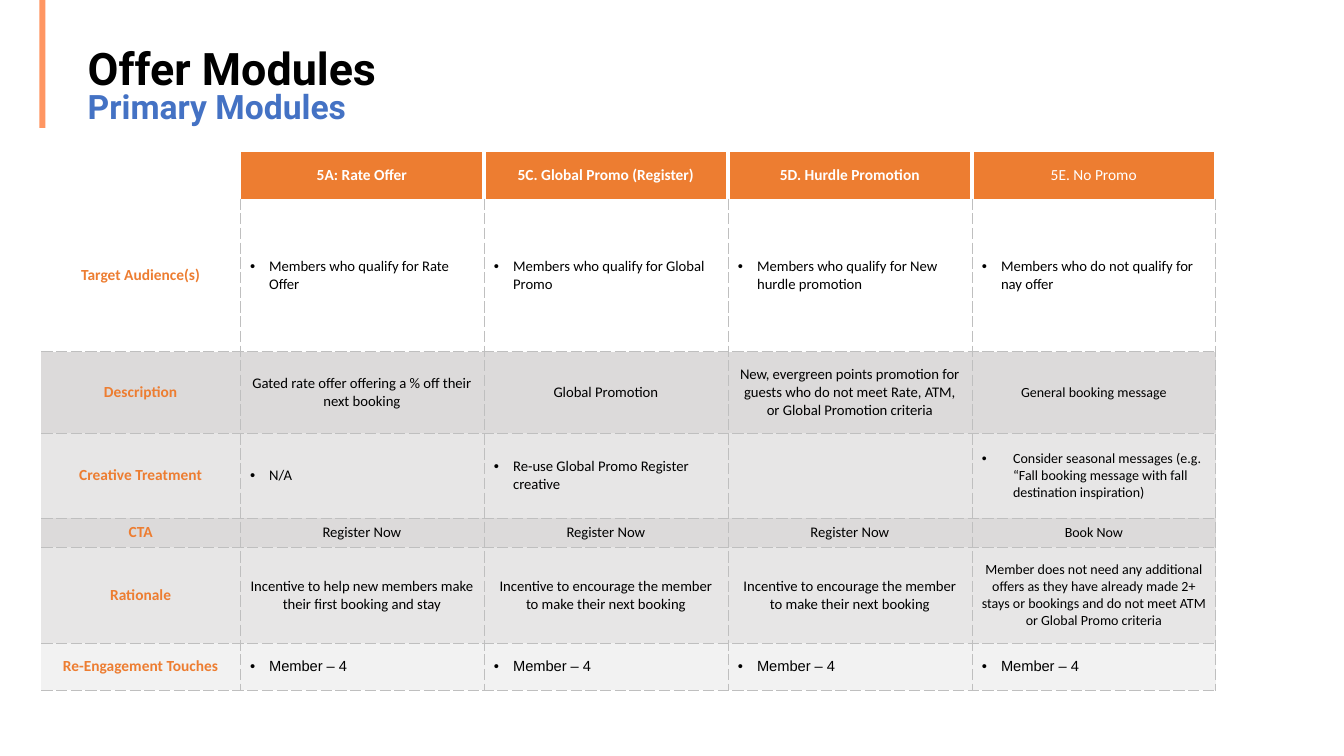
from lxml import etree
from pptx import Presentation
from pptx.dml.color import RGBColor
from pptx.enum import shapes, text
from pptx.oxml import ns
from pptx.util import Inches, Pt

BLACK = RGBColor(0x00, 0x00, 0x00)
WHITE = RGBColor(0xFF, 0xFF, 0xFF)
BLUE = RGBColor(0x44, 0x72, 0xC4)
ORANGE = RGBColor(0xED, 0x7D, 0x31)
PEACH = RGBColor(0xFF, 0x96, 0x62)
DARK_GREY = RGBColor(0xDC, 0xDA, 0xDA)
MID_GREY = RGBColor(0xE7, 0xE6, 0xE6)
LIGHT_GREY = RGBColor(0xF2, 0xF2, 0xF2)
RULE_GREY = RGBColor(0xBF, 0xBF, 0xBF)

DASHED = (RULE_GREY, 0.5, "sysDash")
WHITE_THIN = (WHITE, 1, "solid")
WHITE_THICK = (WHITE, 3, "solid")

LABEL_WIDTH, MODULE_WIDTH = 1.97, 2.42
HEADER_HEIGHT = 0.47
MODULES = ["5A: Rate Offer", "5C. Global Promo (Register)",
           "5D. Hurdle Promotion", "5E. No Promo"]
ENCOURAGE = "Incentive to encourage the member to make their next booking"

# label, height, fill, bulleted, font, size in the last column, one text per module
TOPICS = [
    ("Target Audience(s)", 1.52, WHITE, True, "Calibri", 10.5,
     ["Members who qualify for Rate Offer",
      "Members who qualify for Global Promo",
      "Members who qualify for New hurdle promotion",
      "Members who do not qualify for nay offer"]),
    ("Description", 0.81, DARK_GREY, False, "Calibri", 10,
     ["Gated rate offer offering a % off their next booking",
      "Global Promotion",
      "New, evergreen points promotion for guests who do not meet Rate, ATM, "
      "or Global Promotion criteria",
      "General booking message"]),
    ("Creative Treatment", 0.84, MID_GREY, True, "Calibri", 10,
     ["N/A",
      "Re-use Global Promo Register creative",
      "",
      "Consider seasonal messages (e.g. “Fall booking message with fall "
      "destination inspiration)"]),
    ("CTA", 0.29, DARK_GREY, False, "Calibri", 10,
     ["Register Now"] * 3 + ["Book Now"]),
    ("Rationale", 0.95, MID_GREY, False, "Calibri", 10,
     ["Incentive to help new members make their first booking and stay",
      ENCOURAGE,
      ENCOURAGE,
      "Member does not need any additional offers as they have already made 2+ "
      "stays or bookings and do not meet ATM or Global Promo criteria"]),
    ("Re-Engagement Touches", 0.47, LIGHT_GREY, True, "Arial", 10.5,
     ["Member – 4"] * 4),
]


def add_run(paragraph, words, font, size, color, bold):
    run = paragraph.add_run()
    run.text = words
    run.font.name = font
    run.font.size = Pt(size)
    run.font.bold = bold
    run.font.color.rgb = color


def add_bullet(paragraph, indent):
    properties = paragraph._p.get_or_add_pPr()
    properties.set("marL", str(Inches(indent)))
    properties.set("indent", str(-Inches(indent)))
    etree.SubElement(properties, ns.qn("a:buFont")).set("typeface", "Arial")
    etree.SubElement(properties, ns.qn("a:buChar")).set("char", "•")


def style_cell(cell, fill, left=None, right=None, top=None, bottom=None):
    """Give the cell a fill and borders; a side left at None has no line."""
    properties = cell._tc.get_or_add_tcPr()
    for side, border in zip("LRTB", (left, right, top, bottom)):
        line = etree.SubElement(properties, ns.qn(f"a:ln{side}"))
        if border is None:
            etree.SubElement(line, ns.qn("a:noFill"))
            continue
        color, width, dash = border
        line.set("w", str(Pt(width)))
        solid = etree.SubElement(line, ns.qn("a:solidFill"))
        etree.SubElement(solid, ns.qn("a:srgbClr")).set("val", str(color))
        etree.SubElement(line, ns.qn("a:prstDash")).set("val", dash)
    cell.fill.solid()
    cell.fill.fore_color.rgb = fill
    cell.vertical_anchor = text.MSO_ANCHOR.MIDDLE


def write_centred(cell, words, font, size, color, bold):
    paragraph = cell.text_frame.paragraphs[0]
    paragraph.alignment = text.PP_ALIGN.CENTER
    add_run(paragraph, words, font, size, color, bold)


def add_accent_bar(slide, left, top, width, height):
    bar = slide.shapes.add_shape(shapes.MSO_SHAPE.RECTANGLE, Inches(left),
                                 Inches(top), Inches(width), Inches(height))
    bar.shadow.inherit = False
    bar.fill.solid()
    bar.fill.fore_color.rgb = PEACH
    bar.line.fill.background()


def fill_title(slide, left, top, width, height):
    title = slide.shapes.title
    title.left, title.top = Inches(left), Inches(top)
    title.width, title.height = Inches(width), Inches(height)
    frame = title.text_frame
    frame.word_wrap = True
    frame.auto_size = text.MSO_AUTO_SIZE.NONE
    frame.vertical_anchor = text.MSO_ANCHOR.BOTTOM
    heading = frame.paragraphs[0]
    heading.alignment = text.PP_ALIGN.LEFT
    heading.line_spacing = 0.8
    add_run(heading, "Offer Modules", "Roboto", 32, BLACK, True)
    heading.add_line_break()
    add_run(heading, "Primary Modules", "Roboto", 24, BLUE, True)


def fill_header(table):
    style_cell(table.cell(0, 0), WHITE, WHITE_THIN, WHITE_THIN, WHITE_THIN)
    for column, module in enumerate(MODULES, 1):
        cell = table.cell(0, column)
        left = WHITE_THIN if column == 1 else WHITE_THICK
        style_cell(cell, ORANGE, left, WHITE_THICK, WHITE_THIN)
        write_centred(cell, module, "Calibri", 11, WHITE, column < len(MODULES))


def fill_topic(table, row, topic):
    label, _, fill, bulleted, font, last_size, entries = topic
    top = DASHED if row > 1 else None
    label_cell = table.cell(row, 0)
    style_cell(label_cell, fill, None, DASHED, top, DASHED)
    write_centred(label_cell, label, "Calibri", 11, ORANGE, True)
    for column, entry in enumerate(entries, 1):
        cell = table.cell(row, column)
        style_cell(cell, fill, DASHED, DASHED, top, DASHED)
        size = last_size if column == len(entries) else 10.5
        if not entry:
            continue
        if bulleted:
            paragraph = cell.text_frame.paragraphs[0]
            add_bullet(paragraph, 0.19 if size == 10.5 else 0.31)
            add_run(paragraph, entry, font, size, BLACK, False)
        else:
            write_centred(cell, entry, font, size, BLACK, False)


def add_module_table(slide, left, top):
    widths = [LABEL_WIDTH] + [MODULE_WIDTH] * len(MODULES)
    heights = [HEADER_HEIGHT] + [topic[1] for topic in TOPICS]
    table = slide.shapes.add_table(
        len(heights), len(widths), Inches(left), Inches(top),
        Inches(sum(widths)), Inches(sum(heights))).table
    table.first_row = table.horz_banding = False
    for column, width in zip(table.columns, widths):
        column.width = Inches(width)
    for row, height in zip(table.rows, heights):
        row.height = Inches(height)
    fill_header(table)
    for row, topic in enumerate(TOPICS, 1):
        fill_topic(table, row, topic)


def main():
    deck = Presentation()
    deck.slide_width, deck.slide_height = Inches(13.33), Inches(7.5)
    slide = deck.slides.add_slide(deck.slide_layouts.get_by_name("Title Only"))
    add_accent_bar(slide, 0.39, 0, 0.06, 1.27)
    fill_title(slide, 0.77, 0.61, 11.86, 0.69)
    add_module_table(slide, 0.41, 1.5)
    deck.save("out.pptx")


if __name__ == "__main__":
    main()
